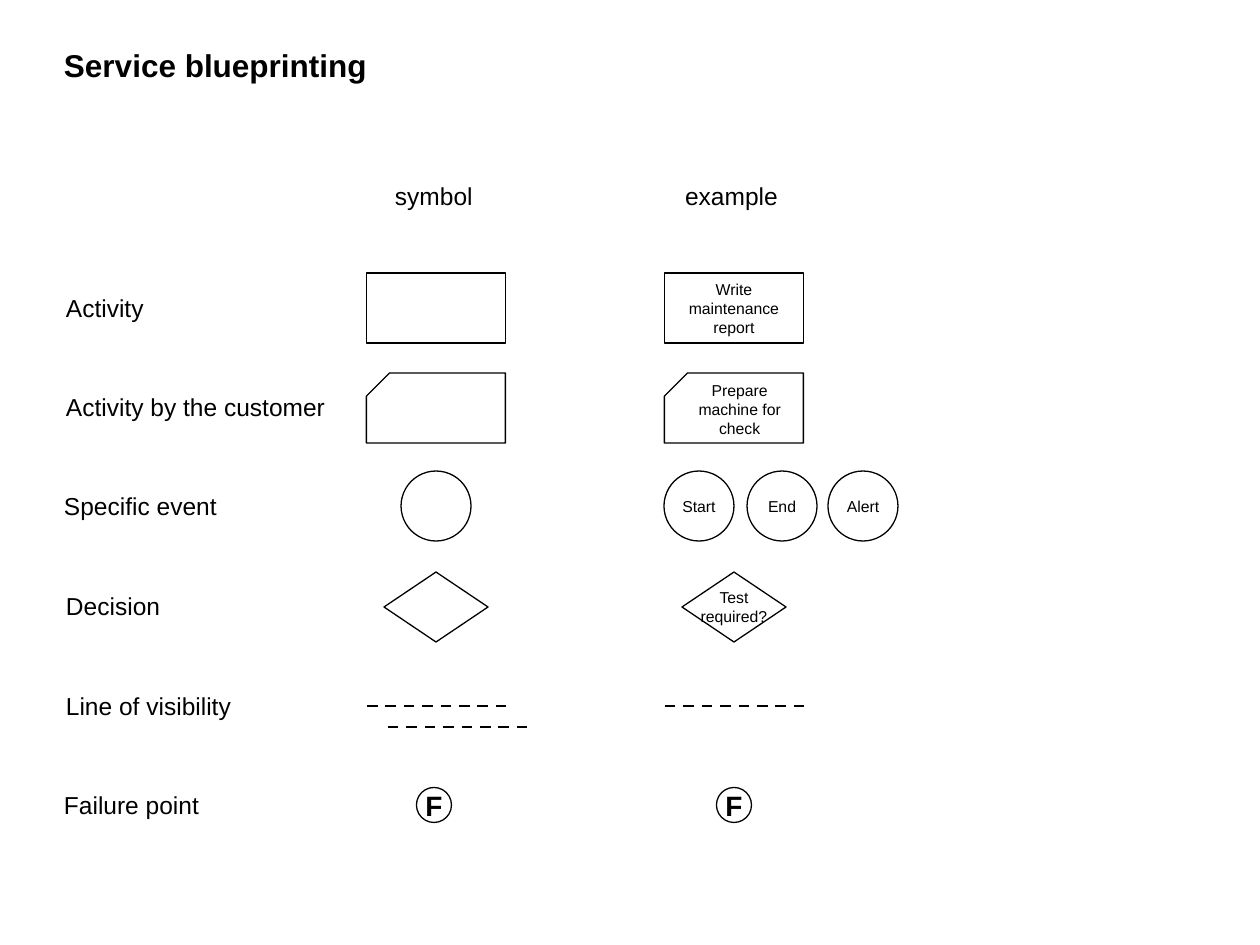
from lxml import etree
from pptx import Presentation, util as u
from pptx.dml.color import RGBColor
from pptx.enum import dml, shapes, text

PX = 914400 / 126
INK = {"black": "000000", "white": "FFFFFF"}
KIND = shapes.MSO_SHAPE

TITLE = "Service blueprinting"
HEADS = [("symbol", 383, 103), ("example", 673, 118)]  # text, left, width
LABELS = [  # text, left, width, row centre
    ("Activity", 66, 78, 308),
    ("Activity by the customer", 66, 261, 407),
    ("Specific event", 64, 154, 506),
    ("Decision", 66, 95, 606),
    ("Line of visibility", 66, 166, 706),
    ("Failure point", 64, 136, 805),
]
FORMS = {  # preset, width, height, row centre, insets, text size, bold
    "task": (KIND.RECTANGLE, 139, 70, 308, (5, 0, 5, 0), 9, False),
    "client": (KIND.SNIP_1_RECTANGLE, 139, 70, 408, (5, 0, 5, 10), 9, False),
    "event": (KIND.OVAL, 70, 70, 506, (0, 0, 0, 0), 9, False),
    "choice": (KIND.FLOWCHART_DECISION, 104, 70, 607, (0, 0, 0, 0), 9, False),
    "fail": (KIND.OVAL, 35, 35, 805, (0, 0, 0, 0), 16, True),
}
SIGNS = [  # form, centre x, text
    ("task", 436, ""), ("task", 734, "Write maintenance report"),
    ("client", 436, ""), ("client", 734, "Prepare machine for check"),
    ("event", 436, ""), ("event", 699, "Start"),
    ("event", 782, "End"), ("event", 863, "Alert"),
    ("choice", 436, ""), ("choice", 734, "Test\vrequired?"),
    ("fail", 434, "F"), ("fail", 734, "F"),
]
DASHES = [(367, 706), (388, 727), (665, 706)]  # left, y
DASH_W = 139


def px(n):
    return u.Emu(round(n * PX))


def color(name):
    return RGBColor.from_string(INK[name])


def write(frame, words, size, bold=False, insets=(0, 0, 0, 0), **form):
    """Fill a text frame; insets run left, top, right, bottom."""
    frame.text = words
    for side, gap in zip(("left", "top", "right", "bottom"), insets):
        setattr(frame, "margin_" + side, px(gap))
    align = form.pop("align", text.PP_ALIGN.LEFT)
    for key, val in form.items():
        setattr(frame, key, val)
    para = frame.paragraphs[0]
    para.alignment = align
    look = {"name": "Arial", "size": u.Pt(size), "bold": bold}
    for run in para.runs:
        for key, val in look.items():
            setattr(run.font, key, val)
        run.font.color.rgb = color("black")


def label(slide, words, x, y, w, h, insets):
    box = slide.shapes.add_textbox(px(x), px(y), px(w), px(h))
    write(box.text_frame, words, 14, insets=insets, word_wrap=False,
          auto_size=text.MSO_AUTO_SIZE.SHAPE_TO_FIT_TEXT)


def sign(slide, form, mid, words):
    kind, w, h, row, insets, size, bold = FORMS[form]
    shape = slide.shapes.add_shape(
        kind, px(mid - w / 2), px(row - h / 2), px(w), px(h))
    shape.shadow.inherit = False
    if form == "fail":
        shape.fill.solid()
        shape.fill.fore_color.rgb = color("white")
    else:
        shape.fill.background()
    shape.line.color.rgb = color("black")
    shape.line.width = u.Pt(0.75)
    if form == "client":
        shape.adjustments[0] = 0.33
        shape._element.spPr.xfrm.set("flipH", "1")
    if words:
        write(shape.text_frame, words, size, bold, insets,
              align=text.PP_ALIGN.CENTER, word_wrap=form != "choice",
              vertical_anchor=text.MSO_ANCHOR.MIDDLE)


def dash(slide, x, y):
    line = slide.shapes.add_connector(
        shapes.MSO_CONNECTOR.STRAIGHT, px(x), px(y), px(x + DASH_W), px(y))
    line.line.color.rgb = color("black")
    line.line.width = u.Pt(1.5)
    line.line.dash_style = dml.MSO_LINE.DASH
    props = line._element.spPr
    etree.SubElement(props, props.xfrm.tag.replace("xfrm", "effectLst"))


def main():
    deck = Presentation()
    deck.slide_width, deck.slide_height = px(1260), px(945)
    slide = deck.slides.add_slide(deck.slide_layouts[5])

    title = slide.shapes.title
    place = {"left": 64, "top": 46, "width": 932, "height": 38}
    for key, val in place.items():
        setattr(title, key, px(val))
    write(title.text_frame, TITLE, 18, True, word_wrap=True,
          vertical_anchor=text.MSO_ANCHOR.TOP,
          auto_size=text.MSO_AUTO_SIZE.SHAPE_TO_FIT_TEXT)

    for words, x, w in HEADS:
        label(slide, words, x, 175, w, 43, (12, 6, 12, 6))
    for words, x, w, row in LABELS:
        label(slide, words, x, row - 20, w, 40, (0, 5, 0, 5))
    for item in SIGNS:
        sign(slide, *item)
    for x, y in DASHES:
        dash(slide, x, y)
    deck.save("out.pptx")


if __name__ == "__main__":
    main()
